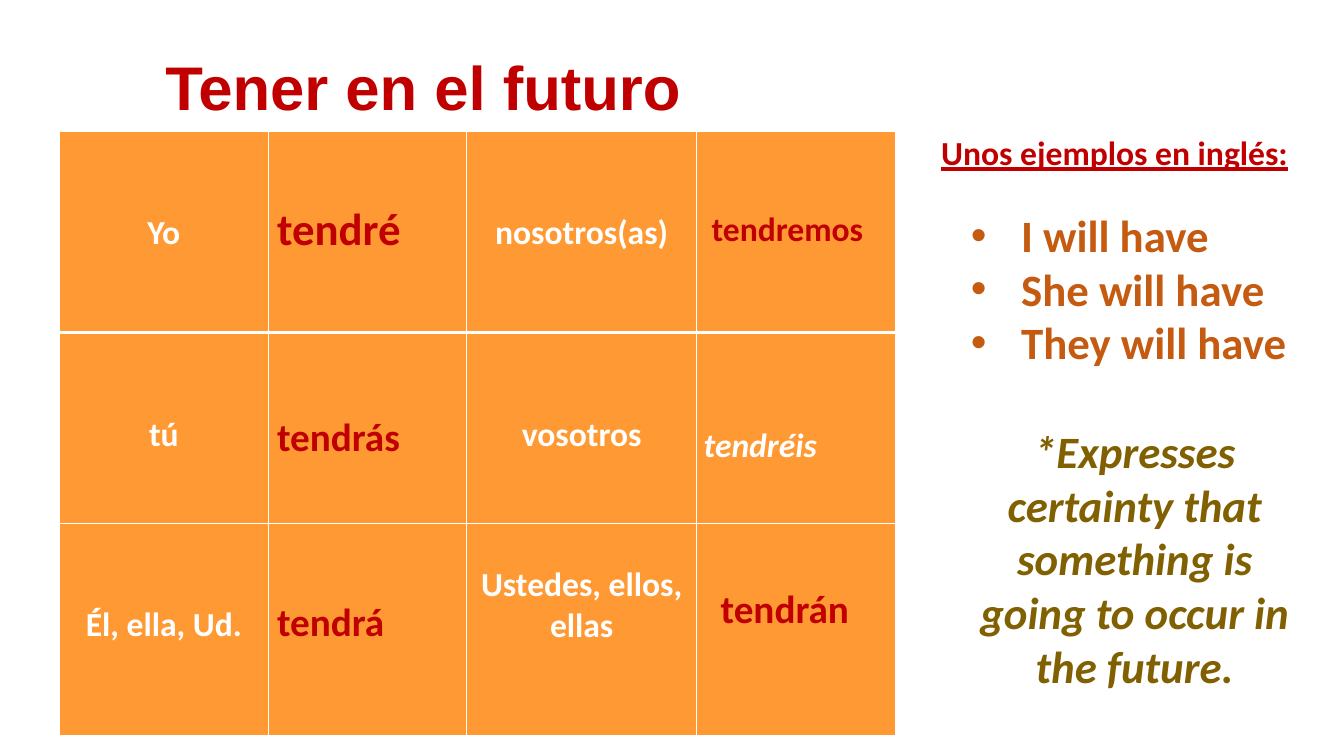
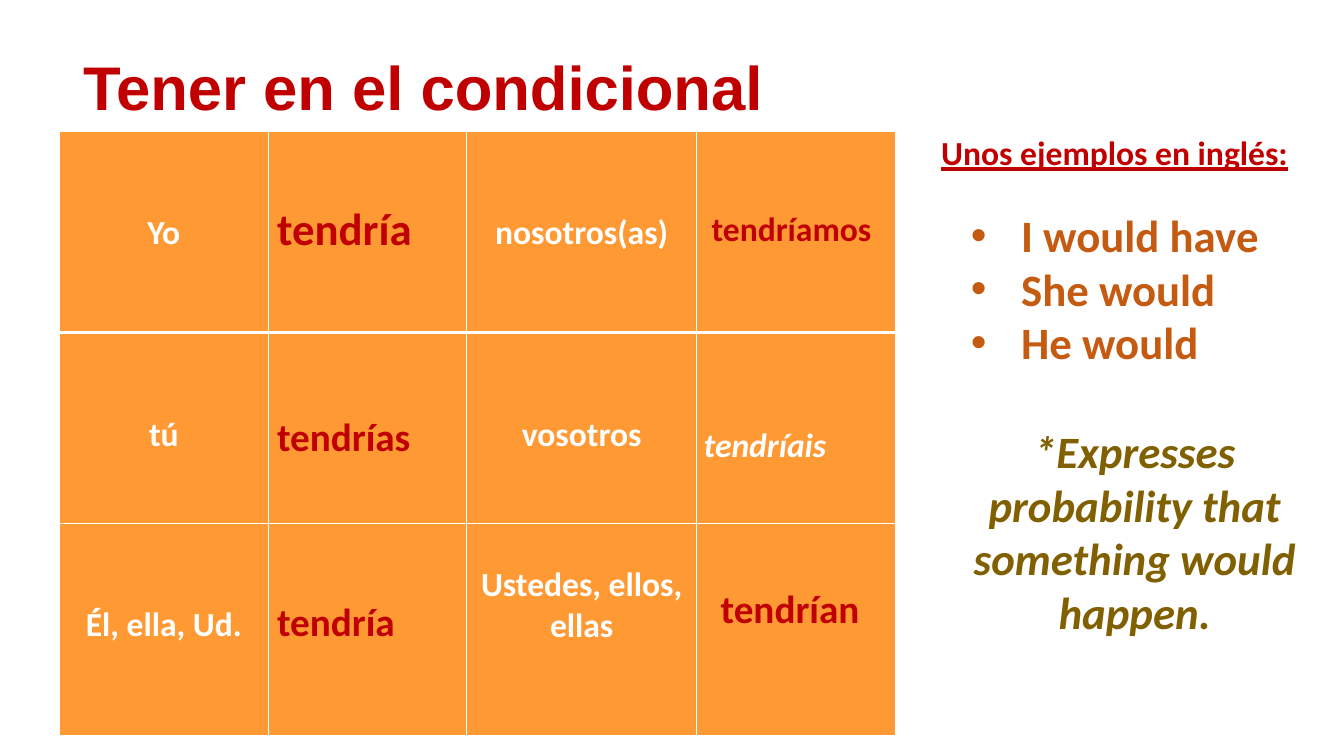
"""Builds two Spanish grammar slides on the verb tener."""
from lxml.etree import SubElement
from pptx import Presentation
from pptx.dml.color import RGBColor
from pptx.enum.shapes import MSO_SHAPE
from pptx.enum.text import MSO_ANCHOR, PP_ALIGN
from pptx.oxml.ns import qn
from pptx.util import Pt

PX = 9144
RED, ORANGE, WHITE = "C00000", "FF9933", "FFFFFF"
RUST, OLIVE = "C55A11", "806000"

LESSONS = [
    {
        "title": "Tener en el futuro",
        "verbs": ["tendré", "tendrás", "tendrá", "tendrán", "tendremos"],
        "vosotros": "tendréis",
        "examples": ["I will have", "She will have", "They will have"],
        "meaning": "*Expresses certainty that something is going to occur in the future.",
    },
    {
        "title": "Tener en el condicional",
        "verbs": ["tendría", "tendrías", "tendría", "tendrían", "tendríamos"],
        "vosotros": "tendríais",
        "examples": ["I would have", "She would", "He would"],
        "meaning": "*Expresses probability that something would happen.",
    },
]
HEADING = "Unos ejemplos en inglés:"
PRONOUNS = [
    (0, 0, "Yo", 81), (0, 2, "nosotros(as)", 81),
    (1, 0, "tú", 81), (1, 2, "vosotros", 81),
    (2, 0, "Él, ella, Ud.", 81), (2, 2, "Ustedes, ellos, ellas", 41),
]
VERB_SPOTS = [
    ((265, 194, 194, 64), 32),
    ((265, 404, 217, 57), 28),
    ((265, 588, 217, 57), 28),
    ((705, 575, 217, 57), 28),
    ((696, 201, 194, 50), 24),
]
TABLE_LEFT, TABLE_TOP = 59, 130
COLUMNS, ROWS = [207, 197, 228, 197], [200, 189, 211]


def px(*lengths):
    return [length * PX for length in lengths]


def color(code):
    return RGBColor.from_string(code)


def style(paragraph, size, code, font="Calibri", align=PP_ALIGN.LEFT, italic=False):
    paragraph.alignment = align
    for run in paragraph.runs:
        run.font.name, run.font.size = font, Pt(size)
        run.font.bold, run.font.italic = True, italic
        run.font.color.rgb = color(code)


def add_text(slide, box, text, size, code, **look):
    frame = slide.shapes.add_textbox(*px(*box)).text_frame
    frame.word_wrap = True
    frame.text = text
    for paragraph in frame.paragraphs:
        style(paragraph, size, code, **look)
    return frame


def add_borders(cell, row):
    thick = {0: "lnB", 1: "lnT"}.get(row)
    for side in ("lnL", "lnR", "lnT", "lnB"):
        width = Pt(3 if side == thick else 1)
        line = SubElement(cell._tc.get_or_add_tcPr(), qn("a:" + side), w=str(width))
        SubElement(SubElement(line, qn("a:solidFill")), qn("a:srgbClr"), val=WHITE)


def fill_cell(cell, text, top, **look):
    cell.margin_left, cell.margin_right, cell.margin_top, cell.margin_bottom = px(7, 7, top, 0)
    cell.text = text
    style(cell.text_frame.paragraphs[0], 24, WHITE, **look)


def add_conjugation(slide, lesson):
    extent = px(TABLE_LEFT, TABLE_TOP, sum(COLUMNS), sum(ROWS))
    table = slide.shapes.add_table(len(ROWS), len(COLUMNS), *extent).table
    table.first_row = table.horz_banding = False
    for column, width in zip(table.columns, px(*COLUMNS)):
        column.width = width
    for index, (row, height) in enumerate(zip(table.rows, px(*ROWS))):
        row.height = height
        for cell in row.cells:
            add_borders(cell, index)
            cell.fill.solid()
            cell.fill.fore_color.rgb = color(ORANGE)
    for row, column, pronoun, top in PRONOUNS:
        fill_cell(table.cell(row, column), pronoun, top, align=PP_ALIGN.CENTER)
    fill_cell(table.cell(1, 3), lesson["vosotros"], 92, italic=True)
    for verb, (box, size) in zip(lesson["verbs"], VERB_SPOTS):
        add_text(slide, box, verb, size, RED)


def add_heading(slide):
    panel = slide.shapes.add_shape(MSO_SHAPE.RECTANGLE, *px(913, 126, 385, 293))
    panel.shadow.inherit = False
    panel.fill.background()
    panel.line.color.rgb = color(WHITE)
    panel.line.width = Pt(0.75)
    frame = panel.text_frame
    frame.vertical_anchor = MSO_ANCHOR.TOP
    frame.text = HEADING
    style(frame.paragraphs[0], 24, RED, align=PP_ALIGN.CENTER)
    frame.paragraphs[0].runs[0].font.underline = True


def add_examples(slide, lesson):
    frame = add_text(slide, (953, 201, 345, 495), "\n".join(lesson["examples"]), 32, RUST)
    for paragraph in frame.paragraphs:
        properties = paragraph._p.get_or_add_pPr()
        properties.set("marL", str(50 * PX))
        properties.set("indent", str(-50 * PX))
        SubElement(properties, qn("a:buFont"), typeface="Arial")
        SubElement(properties, qn("a:buChar"), char="•")
    meaning = frame.add_paragraph()
    meaning.text = lesson["meaning"]
    meaning.space_before = Pt(39)
    style(meaning, 32, OLIVE, align=PP_ALIGN.CENTER, italic=True)


def main():
    deck = Presentation()
    deck.slide_width, deck.slide_height = px(1333, 750)
    for lesson in LESSONS:
        slide = deck.slides.add_slide(deck.slide_layouts[6])
        title = add_text(slide, (-155, 17, 1150, 145), lesson["title"], 44, RED,
                         font="Arial", align=PP_ALIGN.CENTER)
        title.vertical_anchor = MSO_ANCHOR.MIDDLE
        title.paragraphs[0].line_spacing = 0.9
        add_conjugation(slide, lesson)
        add_heading(slide)
        add_examples(slide, lesson)
    deck.save("out.pptx")


if __name__ == "__main__":
    main()
